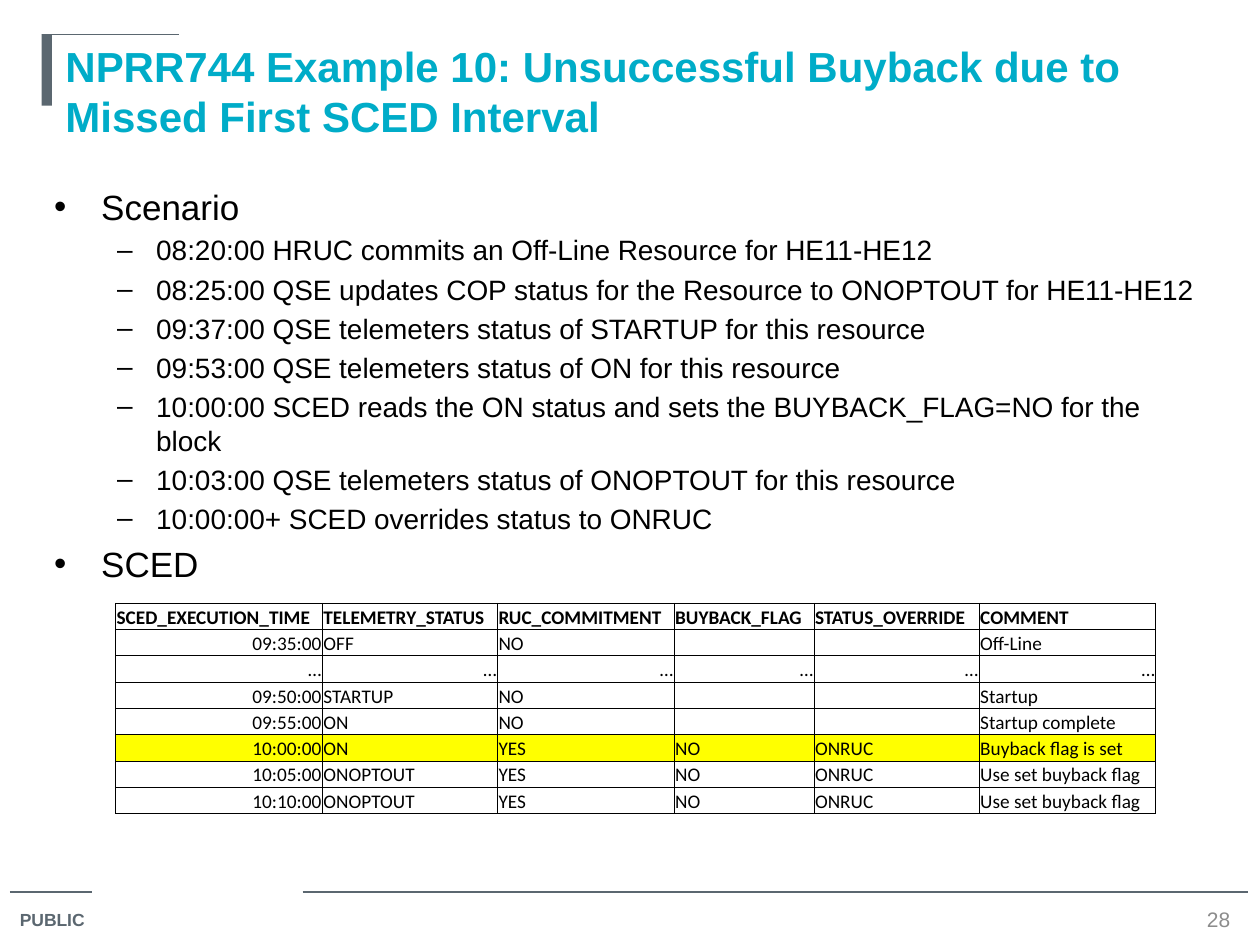
from lxml.etree import SubElement
from pptx import Presentation
from pptx.dml.color import RGBColor
from pptx.enum.shapes import MSO_CONNECTOR, MSO_SHAPE
from pptx.enum.text import MSO_ANCHOR as ANCHOR, PP_ALIGN as ALIGN
from pptx.oxml.ns import qn
from pptx.util import Cm, Pt

# Content
TITLE = "NPRR744 Example 10: Unsuccessful Buyback due to Missed First SCED Interval"
OUTLINE = [
    (0, "Scenario"),
    (1, "08:20:00 HRUC commits an Off-Line Resource for HE11-HE12"),
    (1, "08:25:00 QSE updates COP status for the Resource to ONOPTOUT for HE11-HE12"),
    (1, "09:37:00 QSE telemeters status of STARTUP for this resource"),
    (1, "09:53:00 QSE telemeters status of ON for this resource"),
    (1, "10:00:00 SCED reads the ON status and sets the BUYBACK_FLAG=NO for the block"),
    (1, "10:03:00 QSE telemeters status of ONOPTOUT for this resource"),
    (1, "10:00:00+ SCED overrides status to ONRUC"),
    (0, "SCED"),
]
# level: bullet, size in points, text indent and hanging indent in cm
LEVELS = [("•", 20, 0.95, 0.95), ("–", 16, 2.06, 0.79)]
ROWS = [
    ("SCED_EXECUTION_TIME", "TELEMETRY_STATUS", "RUC_COMMITMENT",
     "BUYBACK_FLAG", "STATUS_OVERRIDE", "COMMENT"),
    ("09:35:00", "OFF", "NO", "", "", "Off-Line"),
    ("…",) * 6,
    ("09:50:00", "STARTUP", "NO", "", "", "Startup"),
    ("09:55:00", "ON", "NO", "", "", "Startup complete"),
    ("10:00:00", "ON", "YES", "NO", "ONRUC", "Buyback flag is set"),
    ("10:05:00", "ONOPTOUT", "YES", "NO", "ONRUC", "Use set buyback flag"),
    ("10:10:00", "ONOPTOUT", "YES", "NO", "ONRUC", "Use set buyback flag"),
]
COL_WIDTHS = [4.17, 3.53, 3.56, 2.82, 3.33, 3.56]
ROW_HEIGHT = 0.53
FLAG_ROW = 5
RULES = [(0.2, 17.98, 1.85), (6.1, 17.98, 25.15), (0.84, 0.69, 3.61)]  # x1, y, x2
SLATE, TEAL, GREY, BLACK, YELLOW = "5B6770", "00ACC8", "8C8C8C", "000000", "FFFF00"


def color(value):
    return RGBColor.from_string(value)


def style(p, size, hue, bold=False, name="Arial"):
    for r in p.runs:
        r.font.size, r.font.bold, r.font.name = Pt(size), bold, name
        r.font.color.rgb = color(hue)


def add_text(x, y, w, h, text, size, hue, bold=False, wrap=True):
    tf = s.shapes.add_textbox(Cm(x), Cm(y), Cm(w), Cm(h)).text_frame
    tf.word_wrap = wrap
    tf.text = text
    style(tf.paragraphs[0], size, hue, bold)
    return tf


def add_borders(cell):
    tcPr = cell._tc.get_or_add_tcPr()
    for side in ("a:lnL", "a:lnR", "a:lnT", "a:lnB"):
        ln = SubElement(tcPr, qn(side), w=str(Pt(0.5)))
        SubElement(SubElement(ln, qn("a:solidFill")), qn("a:srgbClr"), val=BLACK)


prs = Presentation()
prs.slide_width, prs.slide_height = Cm(25.4), Cm(19.05)
s = prs.slides.add_slide(prs.slide_layouts[6])

# Rules and title bar
for x1, y, x2 in RULES:
    line = s.shapes.add_connector(MSO_CONNECTOR.STRAIGHT, Cm(x1), Cm(y), Cm(x2), Cm(y))
    line.line.color.rgb = color(SLATE)
    line.line.width = Pt(0.75)
    SubElement(line._element.spPr, qn("a:effectLst"))
bar = s.shapes.add_shape(MSO_SHAPE.RECTANGLE, Cm(0.84), Cm(0.69), Cm(0.21), Cm(1.44))
bar.shadow.inherit = False
bar.fill.solid()
bar.fill.fore_color.rgb = color(SLATE)
bar.line.fill.background()

# Title and footer
add_text(1.07, 0.69, 23.5, 3.18, TITLE, 24, TEAL, bold=True)
add_text(0.15, 18.2, 1.96, 0.71, "PUBLIC", 10, SLATE, bold=True, wrap=False)
tf = add_text(23.93, 18.24, 1.27, 0.58, "28", 12, GREY)
tf.vertical_anchor = ANCHOR.MIDDLE
tf.paragraphs[0].alignment = ALIGN.CENTER

# Outline
tf = s.shapes.add_textbox(Cm(0.84), Cm(3.61), Cm(23.7), Cm(7.77)).text_frame
tf.word_wrap = True
tf.text = "\n".join(text for _, text in OUTLINE)
for i, (p, (level, _)) in enumerate(zip(tf.paragraphs, OUTLINE)):
    bullet, size, indent, hang = LEVELS[level]
    p.level = level
    pPr = p._p.get_or_add_pPr()
    pPr.set("marL", str(Cm(indent)))
    pPr.set("indent", str(-Cm(hang)))
    SubElement(pPr, qn("a:buFont"), typeface="Arial")
    SubElement(pPr, qn("a:buChar"), char=bullet)
    p.space_before = Pt(0.2 * size if i else 0)
    style(p, size, BLACK)

# SCED table
table = s.shapes.add_table(len(ROWS), len(COL_WIDTHS), Cm(2.33), Cm(12.16),
                           Cm(sum(COL_WIDTHS)), Cm(ROW_HEIGHT * len(ROWS))).table
table.horz_banding = False
for col, width in zip(table.columns, COL_WIDTHS):
    col.width = Cm(width)
for i, values in enumerate(ROWS):
    table.rows[i].height = Cm(ROW_HEIGHT)
    for j, value in enumerate(values):
        cell = table.cell(i, j)
        cell.margin_left = cell.margin_right = cell.margin_top = Cm(0.02)
        cell.margin_bottom = 0
        cell.vertical_anchor = ANCHOR.BOTTOM
        add_borders(cell)
        if i == FLAG_ROW:
            cell.fill.solid()
            cell.fill.fore_color.rgb = color(YELLOW)
        else:
            cell.fill.background()
        cell.text_frame.text = value
        p = cell.text_frame.paragraphs[0]
        if value == "…" or (i and j == 0):
            p.alignment = ALIGN.RIGHT
        style(p, 11, BLACK, bold=i == 0, name="Calibri")
        if not value:  # keeps empty cells from stretching the row
            SubElement(p._p, qn("a:endParaRPr"), sz="1100")

prs.save("out.pptx")
